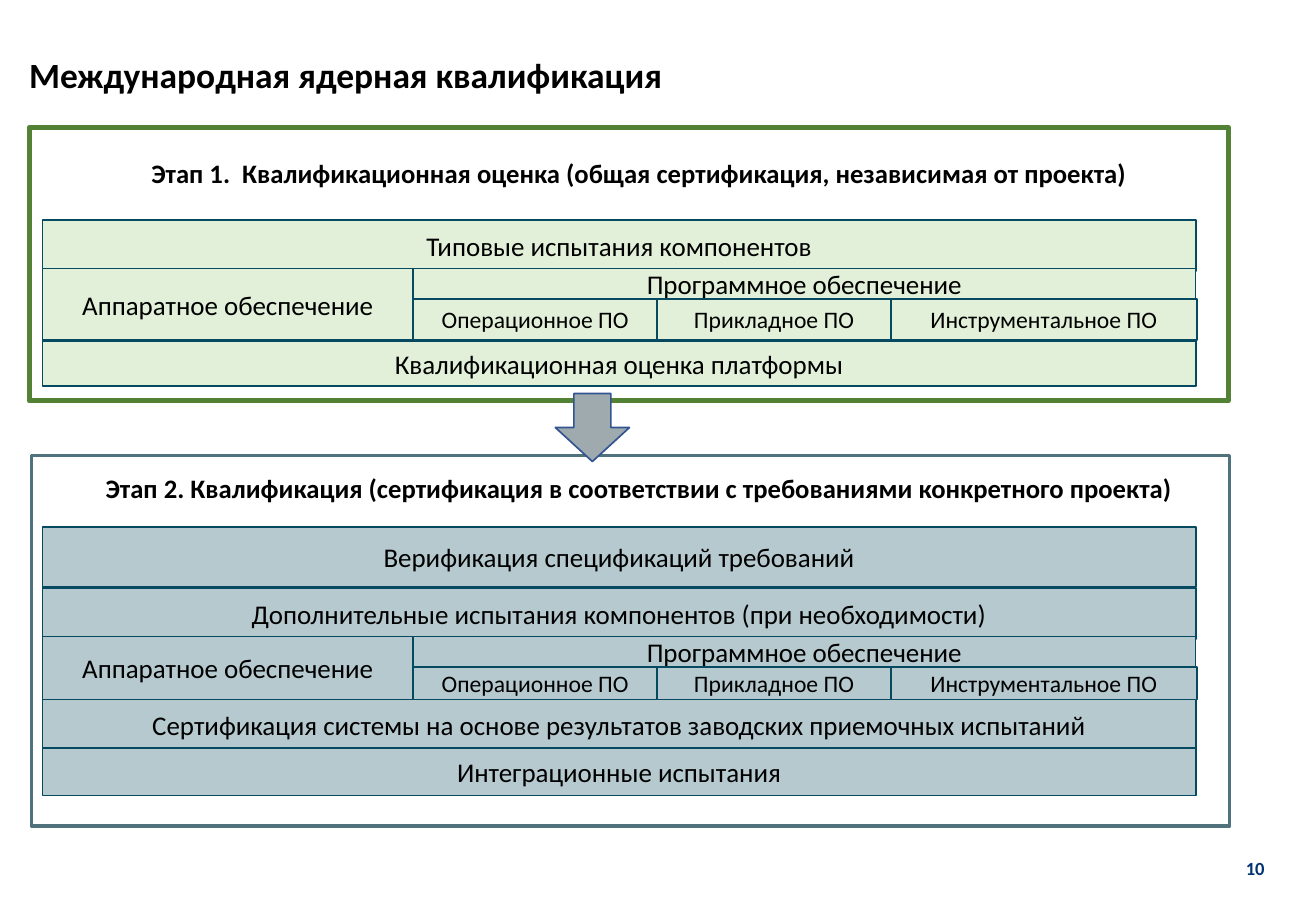
import pptx
import pptx.util
import pptx.dml.color
import pptx.enum.shapes
import pptx.enum.text

Inches, Pt = pptx.util.Inches, pptx.util.Pt
SHAPE = pptx.enum.shapes.MSO_SHAPE
ALIGN = pptx.enum.text.PP_ALIGN
MIDDLE = pptx.enum.text.MSO_ANCHOR.MIDDLE

# Content: a row is (top, height, text), a split is (top, upper height, lower height)
TITLE = "Международная ядерная квалификация"
NUMBER = "10"
HARD = "Аппаратное обеспечение"
SOFT = "Программное обеспечение"
PARTS = [("Операционное ПО", 2.01), ("Прикладное ПО", 1.92), ("Инструментальное ПО", 2.52)]
STAGES = [
    {
        "head": (1.21, 0.42, "Этап 1.  Квалификационная оценка (общая сертификация, независимая от проекта)"),
        "rows": [
            (1.81, 0.42, "Типовые испытания компонентов"),
            (2.81, 0.37, "Квалификационная оценка платформы"),
        ],
        "split": (2.21, 0.25, 0.34),
        "fill": "green",
        "frame": (0.24, 1.05, 9.87, 2.25),
        "edge": ("leaf", 3),
    },
    {
        "head": (3.8, 0.43, "Этап 2. Квалификация (сертификация в соответствии с требованиями конкретного проекта)"),
        "rows": [
            (4.34, 0.49, "Верификация спецификаций требований"),
            (4.84, 0.42, "Дополнительные испытания компонентов (при необходимости)"),
            (5.76, 0.41, "Сертификация системы на основе результатов заводских приемочных испытаний"),
            (6.16, 0.39, "Интеграционные испытания"),
        ],
        "split": (5.24, 0.25, 0.27),
        "fill": "blue",
        "frame": (0.26, 3.75, 9.86, 3.05),
        "edge": ("slate", 2.25),
    },
]
COLORS = {
    "black": "000000", "white": "FFFFFF", "navy": "003274", "line": "054A60",
    "green": "E2F0D9", "leaf": "548235", "blue": "B5C9CF", "slate": "50727C",
    "gray": "9EAAAE", "rim": "325491",
}
LEFT, WIDTH, SPLIT = 0.35, 9.49, 3.4

prs = pptx.Presentation()
prs.slide_width, prs.slide_height = Inches(10.83), Inches(7.5)
slide = prs.slides.add_slide(prs.slide_layouts[6])


def color(name):
    return pptx.dml.color.RGBColor.from_string(COLORS[name])


def write(shape, text, size, tint="black", bold=False, align=ALIGN.CENTER):
    par = shape.text_frame.paragraphs[0]
    par.alignment = align
    run = par.add_run()
    run.text = text
    form = {"name": "Calibri", "size": Pt(size), "bold": bold}
    for key, value in form.items():
        setattr(run.font, key, value)
    run.font.color.rgb = color(tint)
    return par


def block(box, fill, line, weight=1, kind=SHAPE.RECTANGLE):
    shape = slide.shapes.add_shape(kind, *map(Inches, box))
    shape.shadow.inherit = False
    if fill:
        shape.fill.solid()
        shape.fill.fore_color.rgb = color(fill)
    else:
        shape.fill.background()
    shape.line.color.rgb = color(line)
    shape.line.width = Pt(weight)
    shape.text_frame.word_wrap = True
    shape.text_frame.vertical_anchor = MIDDLE
    return shape


def label(box, form):
    shape = slide.shapes.add_textbox(*map(Inches, box))
    for key, value in form.items():
        setattr(shape.text_frame, key, value)
    return shape


# Title and page number
sides = ("margin_left", "margin_top", "margin_right", "margin_bottom")
title = label((0.24, 0.48, 9.55, 0.33), {"word_wrap": True, **dict.fromkeys(sides, 0)})
write(title, TITLE, 21, bold=True, align=ALIGN.LEFT).line_spacing = 0.9
page = label((10.11, 6.86, 0.44, 0.58), {"word_wrap": False, "vertical_anchor": MIDDLE})
write(page, NUMBER, 11, "navy", True)

# Stages
for stage in STAGES:
    fill = stage["fill"]
    top, high, text = stage["head"]
    write(block((0.68, top, 9.17, high), "white", "white"), text, 15.8, bold=True)
    for top, high, text in stage["rows"]:
        write(block((LEFT, top, WIDTH, high), fill, "line"), text, 16)

    # Hardware beside software and its parts
    top, upper, lower = stage["split"]
    write(block((LEFT, top, SPLIT - LEFT, upper + lower), fill, "line"), HARD, 16)
    write(block((SPLIT, top, LEFT + WIDTH - SPLIT, upper), fill, "line"), SOFT, 16)
    left = SPLIT
    for text, wide in PARTS:
        write(block((left, top + upper, wide, lower), fill, "line"), text, 14)
        left += wide
    block(stage["frame"], None, *stage["edge"])

# Arrow from stage to stage
block((4.57, 3.24, 0.61, 0.56), "gray", "rim", kind=SHAPE.DOWN_ARROW)

prs.save("out.pptx")
